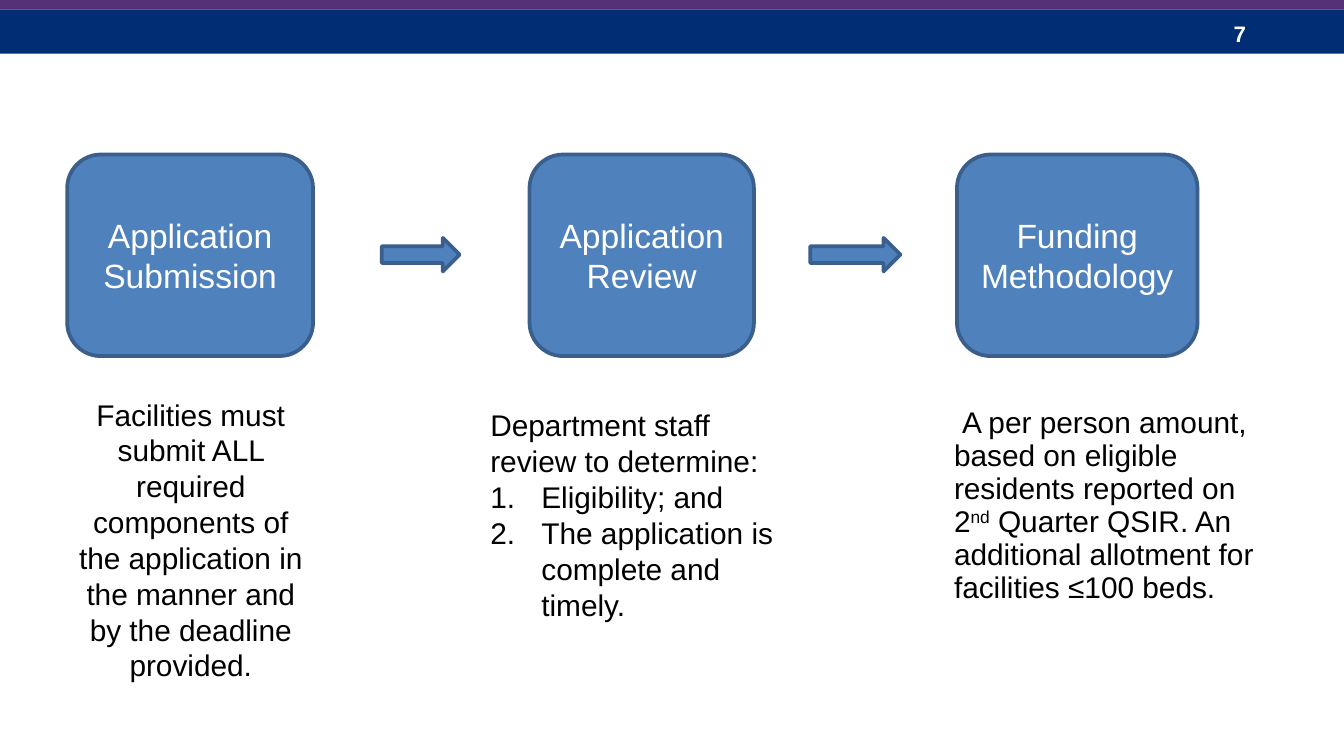
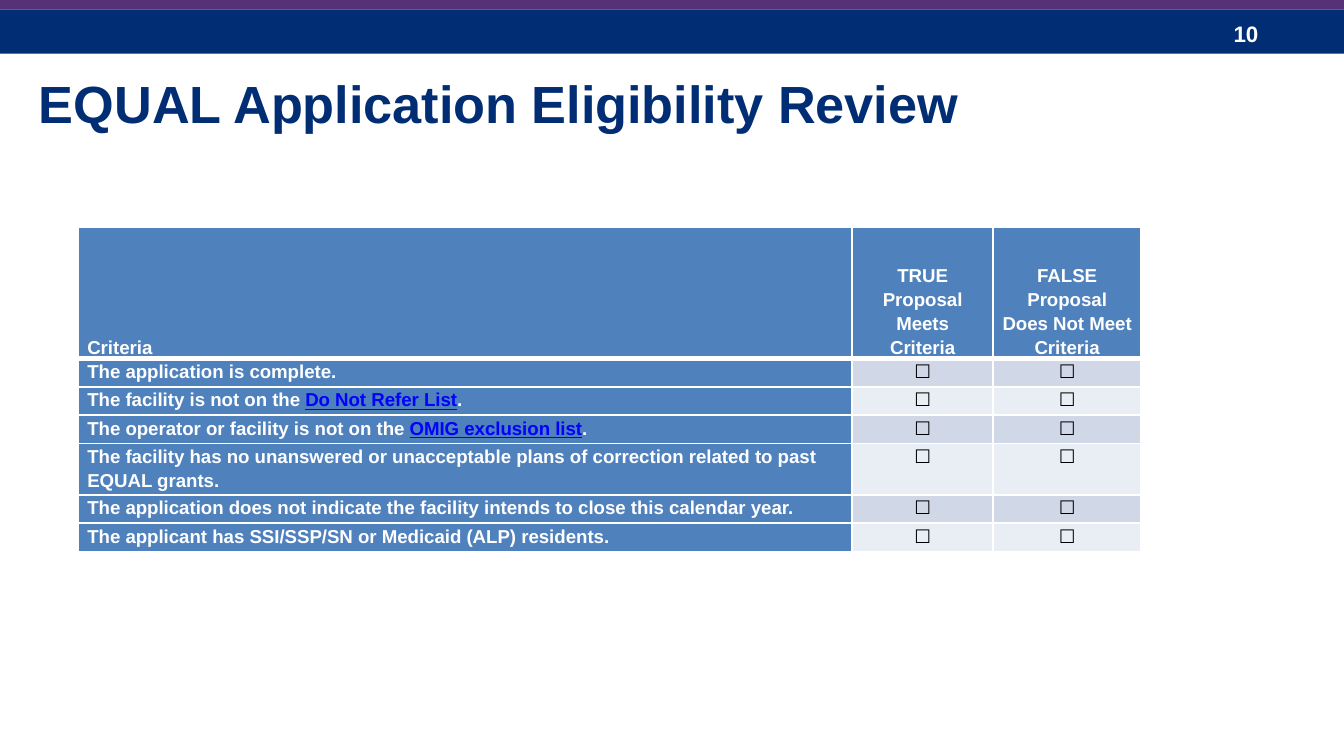
from lxml import etree
from pptx import Presentation
from pptx.dml.color import RGBColor
from pptx.enum.shapes import MSO_SHAPE
from pptx.enum.text import MSO_ANCHOR, MSO_AUTO_SIZE, PP_ALIGN
from pptx.oxml.ns import qn
from pptx.util import Inches, Pt

RECT, ROUND, ARROW = MSO_SHAPE.RECTANGLE, MSO_SHAPE.ROUNDED_RECTANGLE, MSO_SHAPE.RIGHT_ARROW
LEFT, CENTER = PP_ALIGN.LEFT, PP_ALIGN.CENTER
TOP, MIDDLE, BOTTOM = MSO_ANCHOR.TOP, MSO_ANCHOR.MIDDLE, MSO_ANCHOR.BOTTOM
GROW, FIXED = MSO_AUTO_SIZE.SHAPE_TO_FIT_TEXT, MSO_AUTO_SIZE.NONE

FONT = "Arial"
COLORS = {
    "navy": "002D73", "purple": "553278", "blue": "4F81BD", "edge": "3A5F8C",
    "white": "FFFFFF", "black": "000000", "link": "0000FF",
    "dark": "D0D8E8", "light": "E9EDF4",
}
TITLE_ONLY, BLANK = 5, 6


def color(name):
    return RGBColor.from_string(COLORS[name])


def inches(*box):
    return [Inches(n) for n in box]


class Deck:
    """Holds the shared style and the current slide."""

    def __init__(self):
        self.prs = Presentation()
        self.prs.slide_width = Inches(10)
        self.prs.slide_height = Inches(10 * 9 / 16)
        self.slide = None

    def start(self, number, title=None):
        layout = self.prs.slide_layouts[TITLE_ONLY if title else BLANK]
        self.slide = self.prs.slides.add_slide(layout)
        self.shape(RECT, (0, 0.07, 10, 0.33), "navy")
        page = self.box((9.08, 0.1, 0.75, 0.3))
        self.run(page.paragraphs[0], str(number), 12, "white", bold=True)
        self.shape(RECT, (0, -0.02, 10, 0.09), "purple")
        if title:
            self.title(title)

    def title(self, text):
        head = self.slide.shapes.title
        head.left, head.top, head.width, head.height = inches(0.19, 0.48, 9.42, 0.57)
        frame = head.text_frame
        frame.word_wrap, frame.auto_size = True, FIXED
        frame.vertical_anchor = TOP
        para = frame.paragraphs[0]
        para.alignment = LEFT
        self.run(para, text, 28, "navy", bold=True)

    def run(self, para, text, size, tint, bold=False, line=False, base=0):
        """Add one run; base raises it, in percent of the text size."""
        run = para.add_run()
        run.text = text
        font = run.font
        font.name, font.size, font.bold = FONT, Pt(size), bold
        font.color.rgb = color(tint)
        if line:
            font.underline = True
        if base:
            run._r.get_or_add_rPr().set("baseline", str(base * 1000))

    def shape(self, kind, box, fill, edge=None):
        item = self.slide.shapes.add_shape(kind, *inches(*box))
        item.shadow.inherit = False
        item.fill.solid()
        item.fill.fore_color.rgb = color(fill)
        if edge:
            item.line.color.rgb = color(edge)
            item.line.width = Pt(2)
        else:
            item.line.fill.background()
        return item

    def step(self, left, width, text):
        item = self.shape(ROUND, (left, 1.15, width, 1.5), "blue", "edge")
        frame = item.text_frame
        frame.word_wrap, frame.vertical_anchor = True, MIDDLE
        frame.paragraphs[0].alignment = CENTER
        self.run(frame.paragraphs[0], text, 18, "white")

    def arrow(self, left, width):
        self.shape(ARROW, (left, 1.77, width, 0.25), "blue", "edge")

    def box(self, box):
        frame = self.slide.shapes.add_textbox(*inches(*box)).text_frame
        frame.word_wrap, frame.auto_size = True, GROW
        return frame

    def note(self, box, *runs, align=LEFT, indent=0, space=None):
        """Add a text box with one paragraph of (text, raise) runs."""
        frame = self.box(box)
        para = frame.paragraphs[0]
        para.alignment, para.line_spacing = align, space
        if indent:
            para._p.get_or_add_pPr().set("indent", str(Inches(indent)))
        for text, base in runs:
            self.run(para, text, 16, "black", base=base)
        return frame

    def items(self, frame, *texts):
        """Add numbered paragraphs."""
        for text in texts:
            para = frame.add_paragraph()
            props = para._p.get_or_add_pPr()
            props.set("marL", str(Inches(0.38)))
            props.set("indent", str(-Inches(0.38)))
            etree.SubElement(props, qn("a:buAutoNum"), type="arabicPeriod")
            self.run(para, text, 16, "black")

    def cell(self, cell, runs, fill, align, anchor=TOP, top=1, bottom=1):
        props = cell._tc.get_or_add_tcPr()
        for side, width in zip("LRTB", (1, 1, top, bottom)):
            line = etree.SubElement(props, qn("a:ln" + side), w=str(Pt(width)))
            paint = etree.SubElement(line, qn("a:solidFill"))
            etree.SubElement(paint, qn("a:srgbClr"), val=COLORS["white"])
        cell.fill.solid()
        cell.fill.fore_color.rgb = color(fill)
        cell.margin_left = cell.margin_right = Inches(0.07)
        cell.margin_top = cell.margin_bottom = 0
        cell.vertical_anchor = anchor
        para = cell.text_frame.paragraphs[0]
        para.alignment, para.line_spacing = align, 1.15
        for index, part in enumerate(runs):
            link = index == 1
            tint = "black" if part == "☐" else "link" if link else "white"
            self.run(para, part, 10, tint, bold=part != "☐", line=link)

    def table(self, box, widths, heads, rows):
        """Add a checklist: heads on top, two tick boxes in each row."""
        grid = self.slide.shapes.add_table(len(rows) + 1, len(widths), *inches(*box)).table
        grid.horz_banding = False
        for col, width in zip(grid.columns, widths):
            col.width = Inches(width)
        for index, row in enumerate(grid.rows):
            row.height = Inches(0.21 if index else 0.98)
        for col, text in enumerate(heads):
            align = CENTER if col else LEFT
            self.cell(grid.cell(0, col), [text], "blue", align, BOTTOM, bottom=3)
        for index, runs in enumerate(rows, 1):
            top = 3 if index == 1 else 1
            self.cell(grid.cell(index, 0), runs, "blue", LEFT, top=top)
            band = "dark" if index % 2 else "light"
            for col in (1, 2):
                self.cell(grid.cell(index, col), ["☐"], band, CENTER, top=top)


def steps(deck):
    deck.start(7)
    deck.step(0.5, 1.83, "Application Submission")
    deck.arrow(2.84, 0.58)
    deck.step(3.94, 1.67, "Application Review")
    deck.arrow(6.03, 0.67)
    deck.step(7.12, 1.79, "Funding Methodology")
    deck.note((0.42, 2.9, 2, 2.26),
              ("Facilities must submit ALL required components of the application "
               "in the manner and by the deadline provided.", 0), align=CENTER)
    staff = deck.note((3.55, 2.98, 2.45, 1.72),
                      ("Department staff review to determine:", 0))
    deck.items(staff, "Eligibility; and", "The application is complete and timely.")
    deck.note((7, 2.98, 2.58, 1.59),
              ("A per person amount, based on eligible residents reported on 2", 0),
              ("nd", 30),
              (" Quarter QSIR. An additional allotment for facilities ≤100 beds.", 0),
              indent=0.06, space=0.92)


def review(deck):
    deck.start(10, "EQUAL Application Eligibility Review")
    heads = [
        "Criteria",
        "TRUE Proposal Meets Criteria",
        "FALSE Proposal Does Not Meet Criteria",
    ]
    rows = [
        ["The application is complete."],
        ["The facility is not on the ", "Do Not Refer List", "."],
        ["The operator or facility is not on the ", "OMIG exclusion list", "."],
        ["The facility has no unanswered or unacceptable plans of correction "
         "related to past EQUAL grants."],
        ["The application does not indicate the facility intends to close this calendar year."],
        ["The applicant has SSI/SSP/SN or Medicaid (ALP) residents."],
    ]
    deck.table((0.58, 1.69, 7.91, 2.4), (5.76, 1.05, 1.1), heads, rows)


def main():
    deck = Deck()
    steps(deck)
    review(deck)
    deck.prs.save("out.pptx")


if __name__ == "__main__":
    main()
